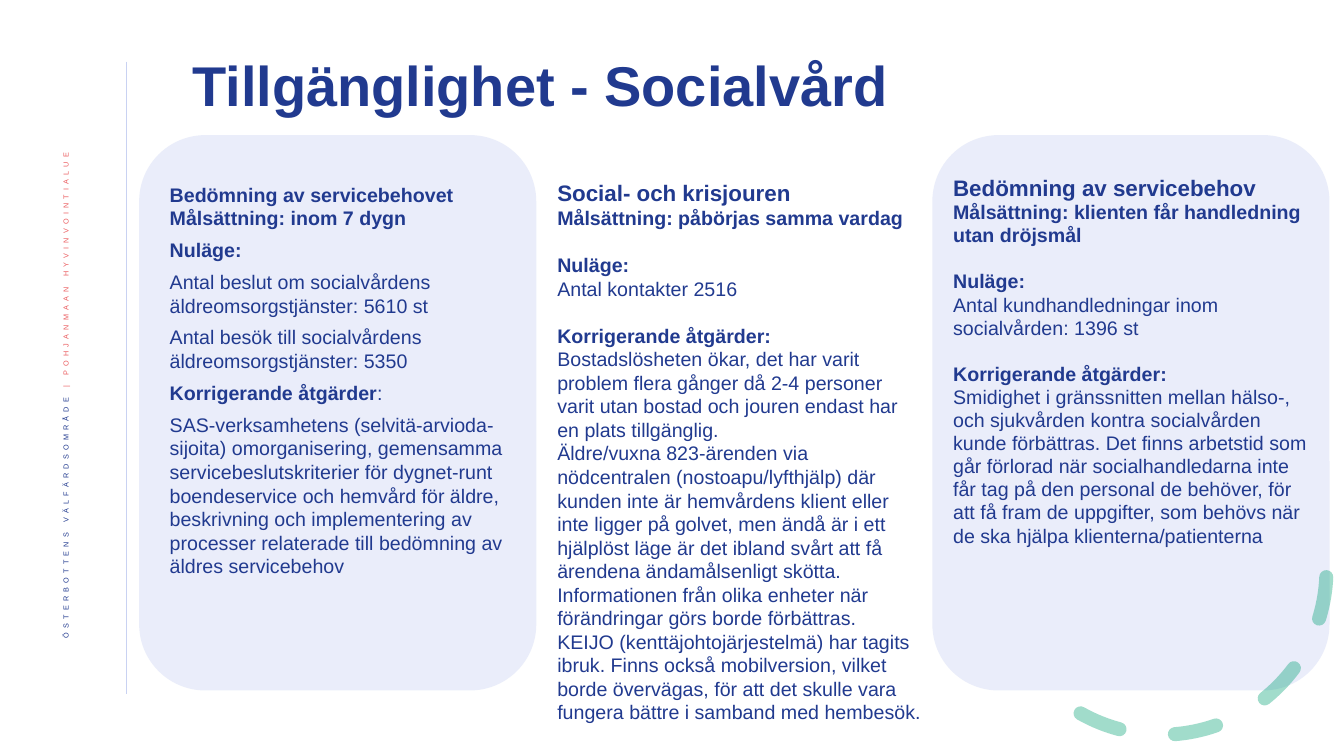
from dataclasses import dataclass
from lxml.etree import SubElement
from pptx import Presentation
from pptx.dml.color import RGBColor as RGB
from pptx.enum.dml import MSO_LINE
from pptx.enum.shapes import MSO_CONNECTOR, MSO_SHAPE as Shape
from pptx.enum.text import MSO_ANCHOR as Anchor, PP_ALIGN as Align
from pptx.oxml.ns import qn
from pptx.util import Pt

TITLE = "Tillgänglighet - Socialvård"
ORGANISATION = [("ÖSTERBOTTENS VÄLFÄRDSOMRÅDE ", "navy"),
                ("| POHJANMAAN HYVINVOINTIALUE", "coral")]

# Each paragraph: style, text and, where needed, a regular-weight tail
ASSESSMENT = [
    ("bold", "Bedömning av servicebehovet Målsättning: inom 7 dygn"),
    ("label", "Nuläge:"),
    ("plain", "Antal beslut om socialvårdens äldreomsorgstjänster: 5610 st"),
    ("plain", "Antal besök till socialvårdens äldreomsorgstjänster: 5350"),
    ("label", "Korrigerande åtgärder", ":"),
    ("plain", "SAS-verksamhetens (selvitä-arvioda-sijoita) omorganisering, gemensamma "
              "servicebeslutskriterier för dygnet-runt boendeservice och hemvård för äldre, "
              "beskrivning och implementering av processer relaterade till bedömning av "
              "äldres servicebehov"),
]
CRISIS = [
    ("heading", "Social- och krisjouren"),
    ("bold", "Målsättning: påbörjas samma vardag"),
    ("label", "Nuläge:"),
    ("plain", "Antal kontakter 2516"),
    ("label", "Korrigerande åtgärder:"),
    ("plain", "Bostadslösheten ökar, det har varit problem flera gånger då 2-4 personer "
              "varit utan bostad och jouren endast har en plats tillgänglig."),
    ("plain", "Äldre/vuxna 823-ärenden via nödcentralen (nostoapu/lyfthjälp) där kunden inte "
              "är hemvårdens klient eller inte ligger på golvet, men ändå är i ett hjälplöst "
              "läge är det ibland svårt att få ärendena ändamålsenligt skötta. Informationen "
              "från olika enheter när förändringar görs borde förbättras."),
    ("plain", "KEIJO (kenttäjohtojärjestelmä) har tagits ibruk. Finns också mobilversion, "
              "vilket borde övervägas, för att det skulle vara fungera bättre i samband med "
              "hembesök."),
]
GUIDANCE = [
    ("heading", "Bedömning av servicebehov"),
    ("bold", "Målsättning: klienten får handledning utan dröjsmål"),
    ("label", "Nuläge:"),
    ("plain", "Antal kundhandledningar inom socialvården: 1396 st"),
    ("label", "Korrigerande åtgärder:"),
    ("plain", "Smidighet i gränssnitten mellan hälso-, och sjukvården kontra socialvården "
              "kunde förbättras. Det finns arbetstid som går förlorad när socialhandledarna "
              "inte får tag på den personal de behöver, för att få fram de uppgifter, som "
              "behövs när de ska hjälpa klienterna/patienterna"),
]


@dataclass(frozen=True)
class Theme:
    font: str = "Arial"
    navy: RGB = RGB(0x21, 0x3A, 0x8F)
    coral: RGB = RGB(0xEB, 0x5C, 0x5F)
    pale: RGB = RGB(0xC9, 0xD2, 0xF2)
    green: RGB = RGB(0x00, 0xA1, 0x74)
    title: int = 40
    heading: int = 16
    body: int = 14
    side: int = 9


THEME = Theme()
CARD_TOP, CARD_WIDTH, CARD_HEIGHT = 96.5, 283.7, 396.7
LEFT_CARD, RIGHT_CARD = 99.4, 666


def set_alpha(fill, percent):
    colour = fill._xPr.find(qn("a:solidFill"))[0]
    SubElement(colour, qn("a:alpha")).set("val", str(percent * 1000))


def style_font(font, size, colour=THEME.navy, bold=False):
    font.name, font.size, font.bold = THEME.font, Pt(size), bold
    font.color.rgb = colour


def set_margins(frame, left, top, right, bottom):
    frame.margin_left, frame.margin_top = Pt(left), Pt(top)
    frame.margin_right, frame.margin_bottom = Pt(right), Pt(bottom)


def write_column(frame, column, margins, leading, label_gap, plain_gap=0):
    """Fill a frame; the gaps are the spaces before labels and plain paragraphs."""
    frame.word_wrap = True
    frame.vertical_anchor = Anchor.TOP
    set_margins(frame, *margins)
    gaps = {"label": label_gap, "plain": plain_gap}
    for index, (style, text, *tail) in enumerate(column):
        para = frame.paragraphs[0] if index == 0 else frame.add_paragraph()
        is_heading = style == "heading"
        para.alignment = Align.LEFT
        para.line_spacing = Pt(leading + 2.4 if is_heading else leading)
        para.space_before = Pt(gaps.get(style, 0))
        para.add_run().text = text
        style_font(para.font, THEME.heading if is_heading else THEME.body,
                   bold=style != "plain")
        for ending in tail:
            run = para.add_run()
            run.text = ending
            run.font.bold = False


def add_card(slide, left):
    card = slide.shapes.add_shape(Shape.ROUNDED_RECTANGLE, Pt(left), Pt(CARD_TOP),
                                  Pt(CARD_WIDTH), Pt(CARD_HEIGHT))
    card.shadow.inherit = False
    card.fill.solid()
    card.fill.fore_color.rgb = THEME.pale
    set_alpha(card.fill, 38)
    card.line.fill.background()
    return card.text_frame


def add_margin_rule(slide):
    rule = slide.shapes.add_connector(MSO_CONNECTOR.STRAIGHT, Pt(90), Pt(44), Pt(90), Pt(495.5))
    rule.line.color.rgb = THEME.pale
    rule.line.width = Pt(0.5)
    SubElement(rule._element.spPr, qn("a:effectLst"))


def add_side_text(slide):
    frame = slide.shapes.add_textbox(Pt(30.2), Pt(102.2), Pt(37.4), Pt(412.6)).text_frame
    frame.word_wrap = True
    frame.vertical_anchor = Anchor.MIDDLE
    frame._txBody.bodyPr.set("vert", "vert270")
    para = frame.paragraphs[0]
    para.alignment = Align.RIGHT
    para.line_spacing = 0.9
    for text, colour in ORGANISATION:
        run = para.add_run()
        run.text = text
        style_font(run.font, THEME.side, getattr(THEME, colour))
        properties = run._r.get_or_add_rPr()
        properties.set("baseline", "30000")
        properties.set("spc", "300")


def add_dashed_arc(slide):
    arc = slide.shapes.add_shape(Shape.ARC, Pt(712), Pt(289.4), Pt(235.4), Pt(235.4))
    arc.shadow.inherit = False
    arc.rotation = 98.9
    arc.adjustments[0], arc.adjustments[1] = 158.17, 17.81
    arc.fill.background()
    arc.line.color.rgb = THEME.green
    arc.line.width = Pt(10)
    arc.line.dash_style = MSO_LINE.DASH
    set_alpha(arc.line.fill, 36)
    arc.line._ln.set("cap", "rnd")


def write_title(slide):
    title = slide.shapes.title
    title.left, title.top, title.width, title.height = Pt(130.3), Pt(32.4), Pt(734.4), Pt(61.2)
    title.text = TITLE
    title.text_frame.vertical_anchor = Anchor.MIDDLE
    para = title.text_frame.paragraphs[0]
    para.alignment = Align.LEFT
    para.line_spacing = 0.9
    style_font(para.font, THEME.title, bold=True)


def main():
    deck = Presentation()
    deck.slide_width, deck.slide_height = Pt(960), Pt(540)
    slide = deck.slides.add_slide(deck.slide_layouts[5])
    add_margin_rule(slide)
    add_side_text(slide)
    write_column(add_card(slide, RIGHT_CARD), GUIDANCE, (1, 14, 0, 0), 16.5, 16.5)
    add_dashed_arc(slide)
    write_title(slide)
    write_column(add_card(slide, LEFT_CARD), ASSESSMENT, (8, 20, 0, 0), 16.8, 6, 6)
    crisis = slide.shapes.add_textbox(Pt(391), Pt(105), Pt(274.5), Pt(420))
    write_column(crisis.text_frame, CRISIS, (7.2, 23, 7.2, 3.6), 16.8, 16.8)
    deck.save("out.pptx")


if __name__ == "__main__":
    main()
